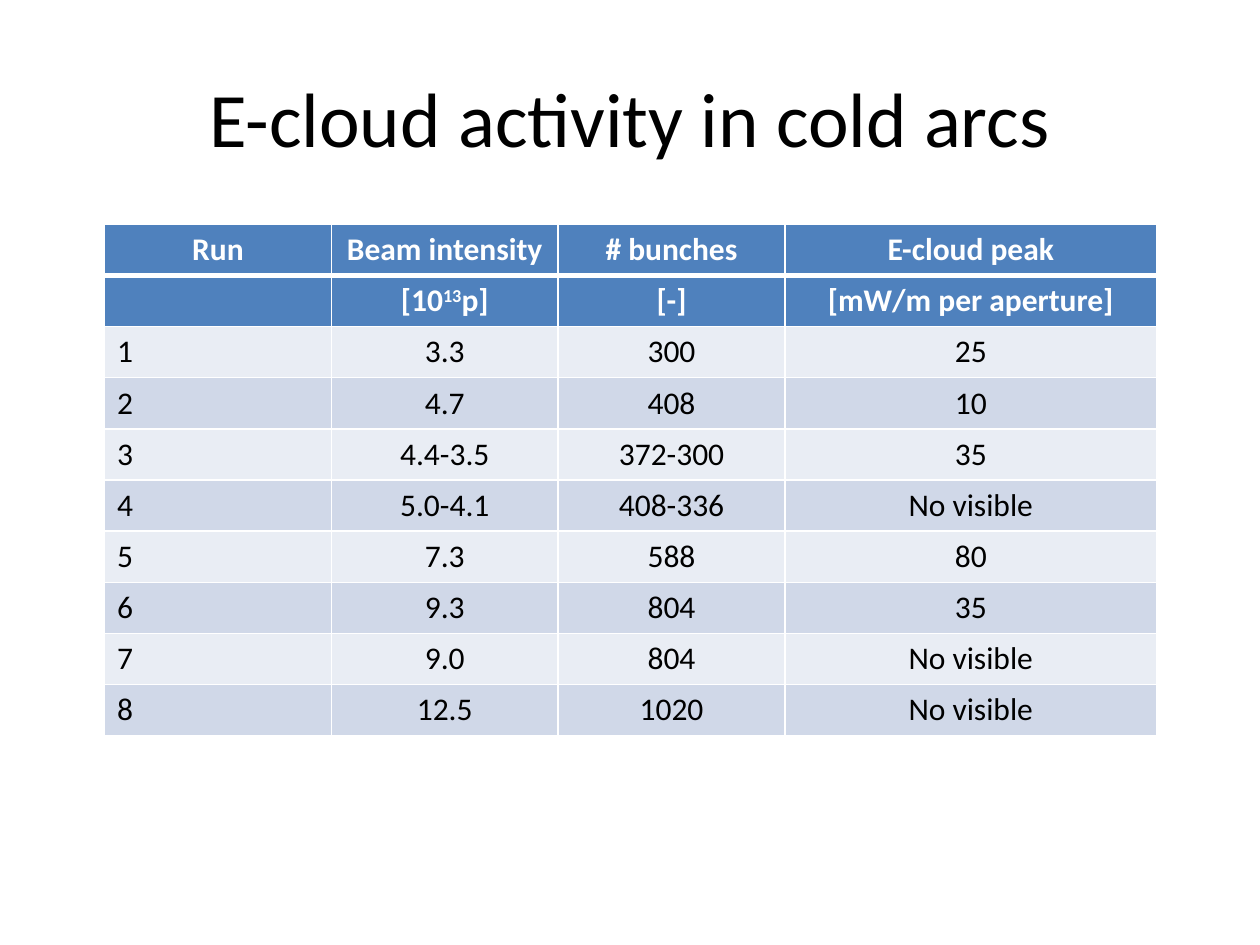
from pptx import Presentation
from pptx import util as u
from pptx.dml.color import RGBColor
from pptx.enum import text
from pptx.oxml import parse_xml
from pptx.oxml.ns import nsdecls

ROWS = [
    ["Run", "Beam intensity", "# bunches", "E-cloud peak"],
    ["", ("[10", "13", "p]"), "[-]", "[mW/m per aperture]"],
    ["1", "3.3", "300", "25"],
    ["2", "4.7", "408", "10"],
    ["3", "4.4-3.5", "372-300", "35"],
    ["4", "5.0-4.1", "408-336", "No visible"],
    ["5", "7.3", "588", "80"],
    ["6", "9.3", "804", "35"],
    ["7", "9.0", "804", "No visible"],
    ["8", "12.5", "1020", "No visible"],
]
WIDTHS = [1.8, 1.8, 1.8, 2.95]
HEADS = 2


def paint(part, tone):
    """Give a fill or font a solid hex colour."""
    if hasattr(part, "solid"):
        part.solid()
        part.fore_color.rgb = RGBColor.from_string(tone)
    else:
        part.color.rgb = RGBColor.from_string(tone)


def write(para, parts, size, tone, bold=False):
    """Add runs to a paragraph, raising every second one."""
    para.font.size = u.Pt(size)
    for i, part in enumerate(parts):
        run = para.add_run()
        run.text = part
        run.font.name = "Calibri"
        run.font.size = u.Pt(size)
        run.font.bold = bold
        paint(run.font, tone)
        if i % 2:
            run.font._element.set("baseline", "30000")


def edge(cell, top, base):
    """Draw white borders round a cell, with given top and base widths."""
    props = cell._tc.get_or_add_tcPr()
    for i, (side, width) in enumerate(zip("LRTB", (1, 1, top, base))):
        line = parse_xml(
            f'<a:ln{side} {nsdecls("a")} w="{u.Pt(width)}"><a:solidFill>'
            f'<a:srgbClr val="FFFFFF"/></a:solidFill></a:ln{side}>')
        props.insert(i, line)


def title(slide, box, words):
    """Place the centred slide title in a box."""
    frame = slide.shapes.add_textbox(*map(u.Inches, box)).text_frame
    frame.word_wrap = True
    frame.vertical_anchor = text.MSO_ANCHOR.MIDDLE
    para = frame.paragraphs[0]
    para.alignment = text.PP_ALIGN.CENTER
    write(para, [words], 44, "000000")


def table(slide, box, rows):
    """Place the table of runs in a box."""
    grid = slide.shapes.add_table(len(rows), len(WIDTHS), *map(u.Inches, box)).table
    for col, width in zip(grid.columns, WIDTHS):
        col.width = u.Inches(width)
    for r, row in enumerate(rows):
        head = r < HEADS
        fill = "4F81BD" if head else ("E9EDF4", "D0D8E8")[r % 2]
        for c, value in enumerate(row):
            cell = grid.cell(r, c)
            paint(cell.fill, fill)
            edge(cell, 3 if r == 1 else 1, 3 if r == 0 else 1)
            para = cell.text_frame.paragraphs[0]
            if head or c:
                para.alignment = text.PP_ALIGN.CENTER
            parts = [value] if isinstance(value, str) else value
            write(para, filter(None, parts), 18, "FFFFFF" if head else "000000", head)


def main():
    """Build and save the slide."""
    deck = Presentation()
    deck.slide_width, deck.slide_height = u.Inches(10), u.Inches(7.5)
    slide = deck.slides.add_slide(deck.slide_layouts[6])
    title(slide, (0.5, 0.3, 9, 1.25), "E-cloud activity in cold arcs")
    table(slide, (0.83, 1.78, 8.35, 4.06), ROWS)
    deck.save("out.pptx")


if __name__ == "__main__":
    main()
